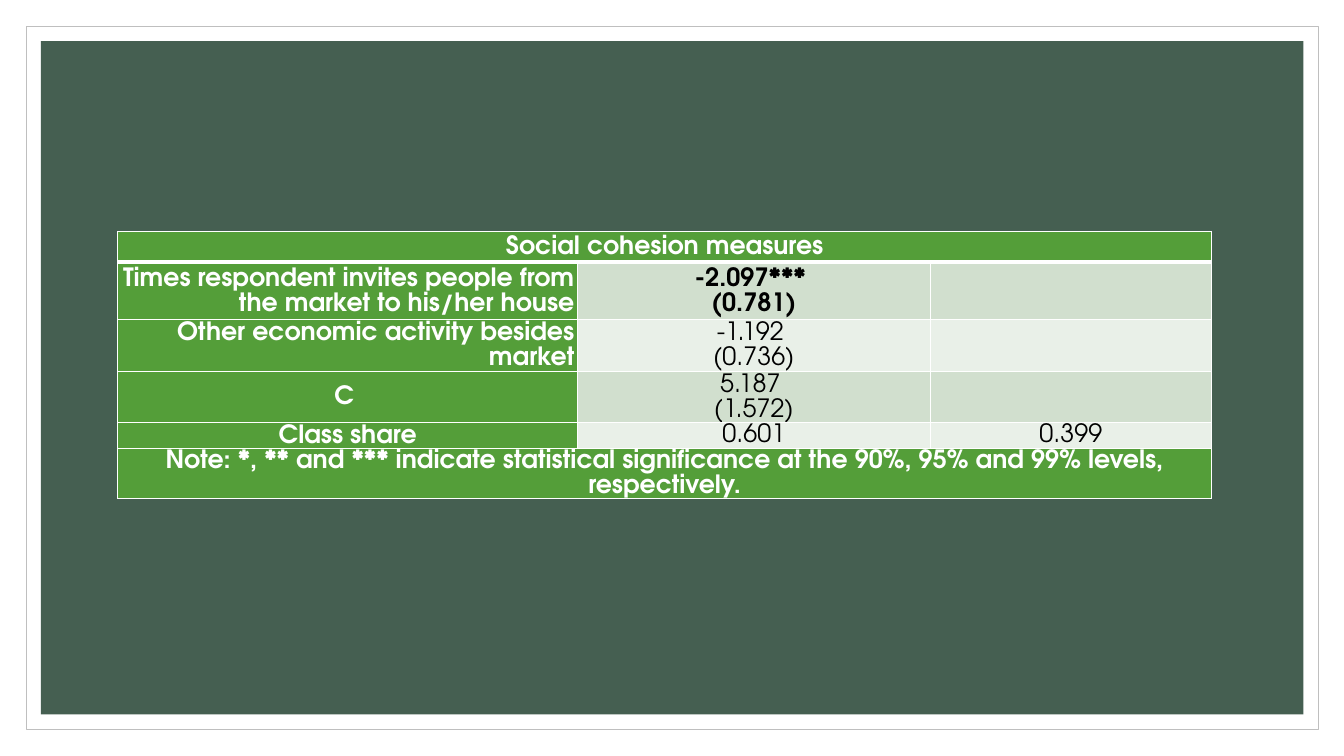
from dataclasses import dataclass

from lxml.etree import SubElement
from pptx import Presentation
from pptx.dml.color import RGBColor
from pptx.enum.shapes import MSO_SHAPE
from pptx.enum.text import MSO_ANCHOR, PP_ALIGN
from pptx.oxml.ns import qn
from pptx.slide import Slide
from pptx.table import Table, _Cell
from pptx.util import Pt

COLORS = {
    "white": "FFFFFF",
    "black": "000000",
    "frame": "BFBFBF",
    "panel": "455F51",
    "heading": "549E39",
    "band_dark": "D1DFCE",
    "band_light": "E9F0E8",
}
FONT = "TeX Gyre Adventor"
COLUMN_WIDTHS = (328.3, 252, 200.9)


@dataclass(frozen=True)
class Panel:
    left: float
    top: float
    width: float
    height: float
    fill: str
    line: str | None = None


@dataclass(frozen=True)
class Row:
    height: float
    label: str
    values: tuple[str, ...] = ()
    band: str = "heading"
    align: PP_ALIGN = PP_ALIGN.CENTER
    bold_values: bool = False


PANELS = (
    Panel(18.9, 18.9, 922.8, 502.4, "white", "frame"),
    Panel(29.3, 29.3, 901.7, 481, "panel"),
)
ROWS = (
    Row(21.6, "Social cohesion measures"),
    Row(41, "Times respondent invites people from the market to his/her house",
        ("-2.097*** \n(0.781)", ""), "band_dark", PP_ALIGN.RIGHT, True),
    Row(37.4, "Other economic activity besides market",
        ("-1.192 \n(0.736)", ""), "band_light", PP_ALIGN.RIGHT),
    Row(18.7, "C ", ("5.187 \n(1.572)", ""), "band_dark"),
    Row(18.7, "Class share", ("0.601", "0.399"), "band_light"),
    Row(21.6, "Note: *, ** and *** indicate statistical signiﬁcance at the 90%, "
        "95% and 99% levels, respectively."),
)


def rgb(name: str) -> RGBColor:
    return RGBColor.from_string(COLORS[name])


def add_panel(page: Slide, panel: Panel) -> None:
    shape = page.shapes.add_shape(
        MSO_SHAPE.RECTANGLE,
        Pt(panel.left), Pt(panel.top), Pt(panel.width), Pt(panel.height),
    )
    shape.shadow.inherit = False
    shape.fill.solid()
    shape.fill.fore_color.rgb = rgb(panel.fill)
    if panel.line:
        shape.line.color.rgb = rgb(panel.line)
        shape.line.width = Pt(0.5)
    else:
        shape.line.fill.background()


def style_cell(cell: _Cell, fill: str, bottom_width: float) -> None:
    """Set the margins, white borders and fill of a cell."""
    cell.margin_left = cell.margin_right = Pt(2.2)
    cell.margin_top = cell.margin_bottom = Pt(0)
    cell.vertical_anchor = MSO_ANCHOR.MIDDLE
    properties = cell._tc.get_or_add_tcPr()
    for side in ("lnL", "lnR", "lnT", "lnB"):
        width = bottom_width if side == "lnB" else 1
        border = SubElement(properties, qn(f"a:{side}"), w=str(Pt(width)))
        paint = SubElement(border, qn("a:solidFill"))
        SubElement(paint, qn("a:srgbClr"), val=COLORS["white"])
    cell.fill.solid()
    cell.fill.fore_color.rgb = rgb(fill)


def write_cell(cell: _Cell, text: str, color: str, bold: bool, align: PP_ALIGN) -> None:
    cell.text = text
    for para in cell.text_frame.paragraphs:
        para.alignment = align
        para.line_spacing = 1.07
        para.font.name = FONT
        para.font.size = Pt(18)
        para.font.bold = bold
        para.font.color.rgb = rgb(color)


def fill_row(table: Table, index: int, row: Row) -> None:
    table.rows[index].height = Pt(row.height)
    cells = list(table.rows[index].cells)
    bottom_width = 3 if index == 0 else 1
    for column, cell in enumerate(cells):
        style_cell(cell, row.band if column else "heading", bottom_width)
    write_cell(cells[0], row.label, "white", True, row.align)
    for cell, value in zip(cells[1:], row.values):
        write_cell(cell, value, "black", row.bold_values, PP_ALIGN.CENTER)
    if not row.values:
        cells[0].merge(cells[-1])


def add_measures_table(page: Slide) -> None:
    table = page.shapes.add_table(
        len(ROWS), len(COLUMN_WIDTHS), Pt(84.2), Pt(165.6),
        Pt(sum(COLUMN_WIDTHS)), Pt(sum(row.height for row in ROWS)),
    ).table
    table.first_row = table.horz_banding = False
    for column, width in zip(table.columns, COLUMN_WIDTHS):
        column.width = Pt(width)
    for index, row in enumerate(ROWS):
        fill_row(table, index, row)


def main() -> None:
    deck = Presentation()
    deck.slide_width, deck.slide_height = Pt(960), Pt(540)
    page = deck.slides.add_slide(deck.slide_layouts[6])
    for panel in PANELS:
        add_panel(page, panel)
    add_measures_table(page)
    deck.save("out.pptx")


if __name__ == "__main__":
    main()
